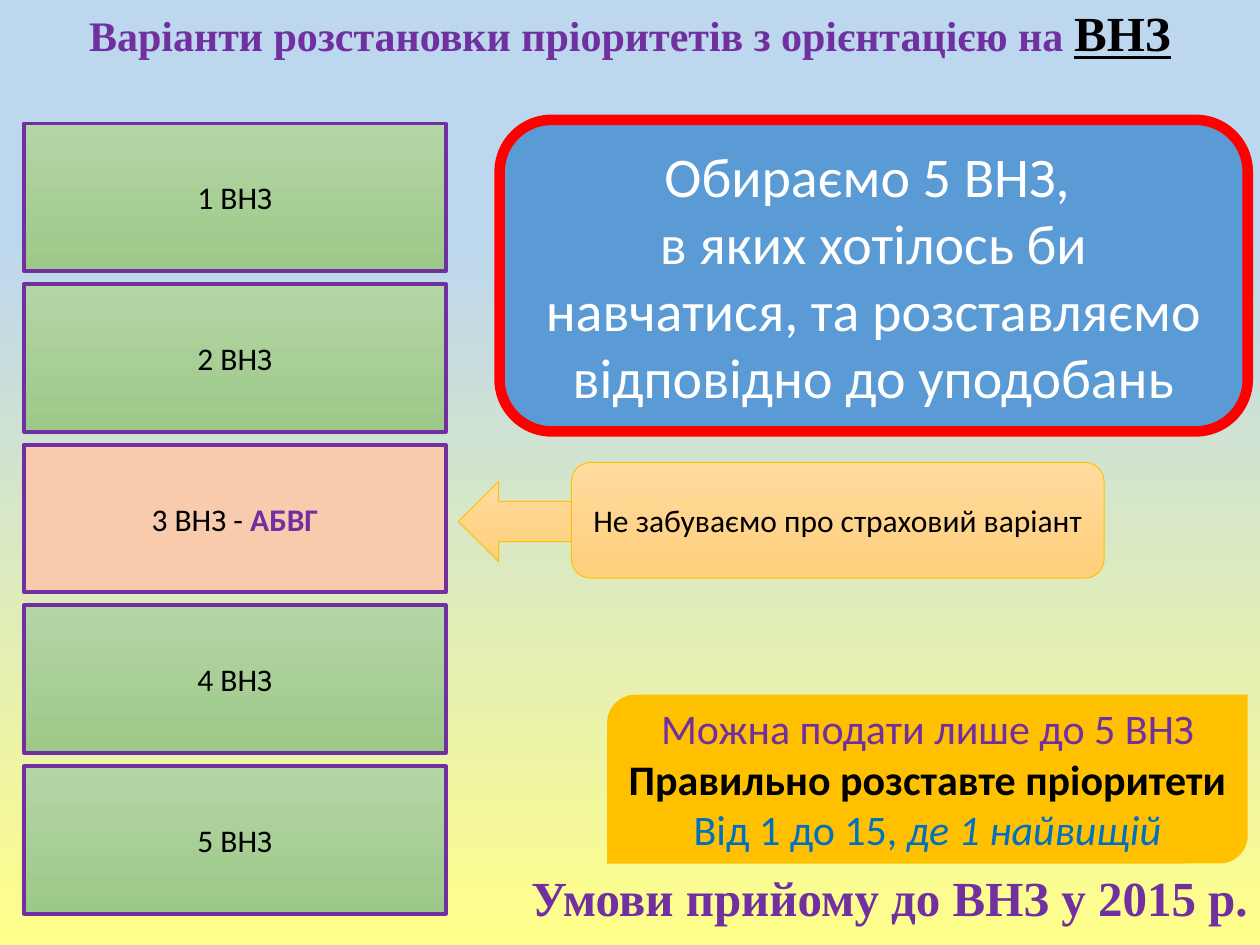
import pptx
import pptx.util
import pptx.dml.color
import pptx.enum.shapes
import pptx.enum.text

Pt = pptx.util.Pt
SHAPE = pptx.enum.shapes.MSO_SHAPE
ALIGN = pptx.enum.text.PP_ALIGN
ANCHOR = pptx.enum.text.MSO_ANCHOR

COLORS = {
    "sky": "BDD7EE", "lemon": "FFFF8A", "purple": "7030A0", "black": "000000",
    "white": "FFFFFF", "red": "FF0000", "blue": "5B9BD5", "gold": "FFC000",
    "ink_blue": "0070C0", "peach": "F8CBAD", "leaf": "B5D5A7",
    "leaf_dark": "9CC987", "sand": "FFDB9E", "sand_dark": "FFD07C",
}


def rgb(name):
    return pptx.dml.color.RGBColor.from_string(COLORS[name])


class SlideBuilder:
    """Holds the slide and its style."""
    body_font = "Calibri"
    title_font = "Times New Roman"

    def __init__(self, slide):
        self.slide = slide

    def paint(self, fill, colors, start=0):
        """Solid fill for one colour, downward gradient for two."""
        if len(colors) == 1:
            fill.solid()
            fill.fore_color.rgb = rgb(colors[0])
            return
        fill.gradient()
        fill.gradient_angle = 270
        for stop, color, position in zip(fill.gradient_stops, colors, (start, 1)):
            stop.color.rgb = rgb(color)
            stop.position = position

    def add_text(self, box, paragraphs, size, font, align=ALIGN.CENTER,
                 anchor=ANCHOR.MIDDLE, spacing=None):
        """Each paragraph is a list of (text, colour, bold, italic) runs."""
        frame = box.text_frame
        frame.word_wrap = True
        frame.vertical_anchor = anchor
        for index, spans in enumerate(paragraphs):
            para = frame.add_paragraph() if index else frame.paragraphs[0]
            para.alignment = align
            para.line_spacing = spacing
            para.font.name = font
            para.font.size = Pt(size)
            for text, color, *styles in spans:
                for number, line in enumerate(text.split("\n")):
                    if number:
                        para.add_line_break()
                    span = para.add_run()
                    span.text = line
                    span.font.color.rgb = rgb(color)
                    if "bold" in styles:
                        span.font.bold = True
                    if "italic" in styles:
                        span.font.italic = True
                    if "underline" in styles:
                        span.font.underline = True

    def shape(self, kind, place, colors, line=None, paragraphs=(), size=18,
              anchor=ANCHOR.MIDDLE):
        box = self.slide.shapes.add_shape(kind, *map(Pt, place))
        box.shadow.inherit = False
        self.paint(box.fill, colors)
        if line:
            box.line.color.rgb = rgb(line[0])
            box.line.width = Pt(line[1])
        else:
            box.line.fill.background()
        self.add_text(box, paragraphs, size, self.body_font, anchor=anchor)
        return box

    def title(self, place, spans, size, align):
        box = self.slide.shapes.add_textbox(*map(Pt, place))
        self.add_text(box, [spans], size, self.title_font, align, spacing=0.9)
        return box


def main():
    deck = pptx.Presentation()
    deck.slide_width, deck.slide_height = Pt(720), Pt(540)
    page = SlideBuilder(deck.slides.add_slide(deck.slide_layouts[6]))
    page.paint(page.slide.background.fill, ["sky", "lemon"], start=0.25)

    # Footer title
    page.title((72, 489, 648, 51),
               [("Умови прийому до ВНЗ у 2015 р.", "purple", "bold")],
               28, ALIGN.RIGHT)

    # Limits on applications
    limits = page.shape(
        SHAPE.ROUND_2_DIAG_RECTANGLE, (347, 397, 366, 96.5), ["gold"],
        paragraphs=[
            [("Можна подати лише до 5 ВНЗ", "purple")],
            [("Правильно розставте пріоритети", "black", "bold")],
            [("Від 1 до 15, ", "ink_blue"),
             ("де 1 найвищій", "ink_blue", "italic")],
        ], size=24, anchor=ANCHOR.TOP)
    limits.text_frame.margin_top = limits.text_frame.margin_bottom = 0

    # Main advice
    advice = ("Обираємо 5 ВНЗ, \nв яких хотілось би навчатися, "
              "та розставляємо відповідно до уподобань")
    page.shape(SHAPE.ROUNDED_RECTANGLE, (285.5, 68.5, 427.5, 178), ["blue"],
               ("red", 6), [[(advice, "white")]], size=32)

    # Ranked choices, the third one highlighted
    top, pitch, highlighted = 70.6, 91.8, 3
    for rank in range(1, 6):
        spans = [(f"{rank} ВНЗ", "black")]
        colors = ["leaf", "leaf_dark"]
        if rank == highlighted:
            spans = [(f"{rank} ВНЗ - ", "black"), ("АБВГ", "purple", "bold")]
            colors = ["peach"]
        page.shape(SHAPE.RECTANGLE, (13.7, top + (rank - 1) * pitch, 241, 84.3),
                   colors, ("purple", 2.25), [spans])

    # Heading, with a larger last word
    heading = page.title(
        (0, -0.7, 720, 42.5),
        [("Варіанти розстановки пріоритетів з орієнтацією на ", "purple", "bold"),
         ("ВНЗ", "black", "bold", "underline")], 24, ALIGN.CENTER)
    heading.text_frame.paragraphs[0].runs[-1].font.size = Pt(28)

    # Arrow and note about the fallback choice
    sand, edge = ["sand", "sand_dark"], ("gold", 0.5)
    page.shape(SHAPE.LEFT_ARROW, (262, 275, 77, 46), sand, edge)
    page.shape(SHAPE.ROUNDED_RECTANGLE, (326.5, 264.2, 304.5, 66.2), sand, edge,
               [[("Не забуваємо про страховий варіант", "black")]])

    deck.save("out.pptx")


if __name__ == "__main__":
    main()
